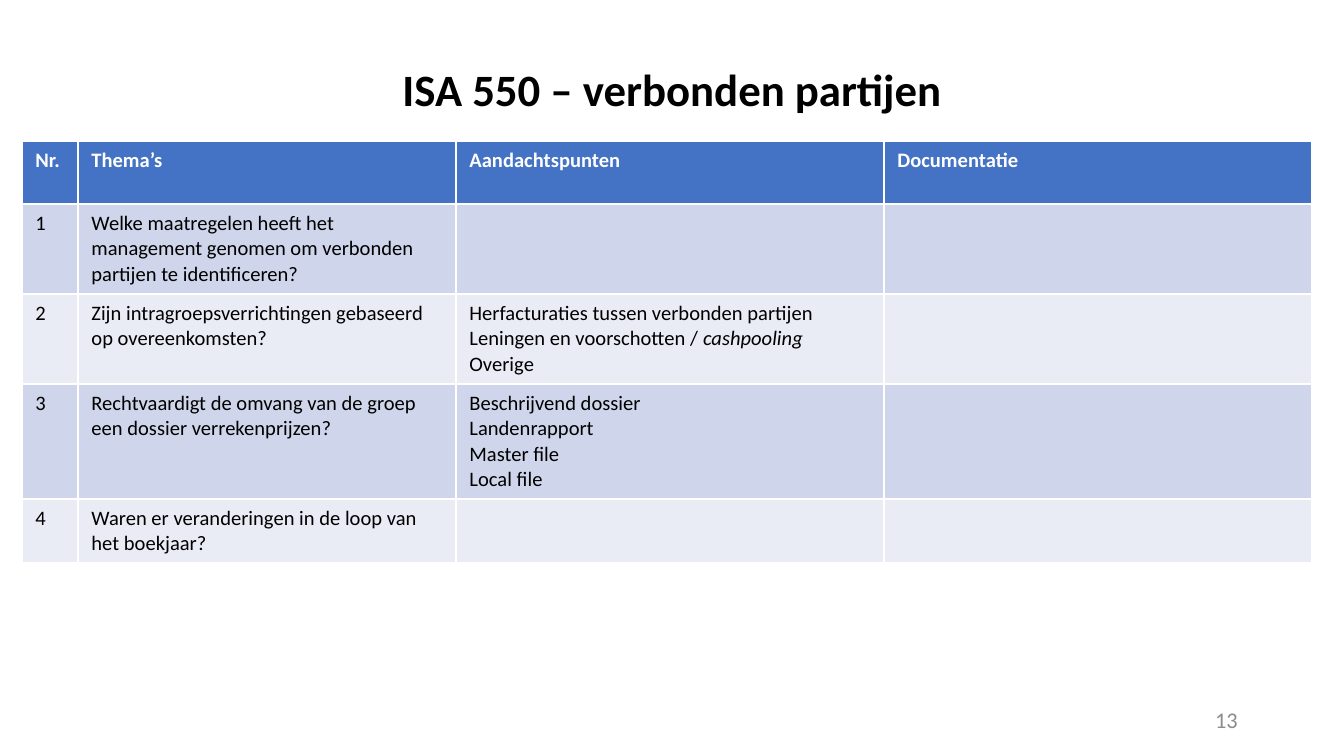
import pptx
import pptx.util
import pptx.dml.color
import pptx.enum.text

PX = 914400 / 134.4
BLACK = pptx.dml.color.RGBColor(0x00, 0x00, 0x00)
WHITE = pptx.dml.color.RGBColor(0xFF, 0xFF, 0xFF)
GREY = pptx.dml.color.RGBColor(0x8C, 0x8C, 0x8C)
BLUE = pptx.dml.color.RGBColor(0x44, 0x72, 0xC4)
BAND_DARK = pptx.dml.color.RGBColor(0xCF, 0xD5, 0xEA)
BAND_LIGHT = pptx.dml.color.RGBColor(0xE9, 0xEB, 0xF5)

COLUMNS = [56, 378, 428, 428]
ROWS = [
    (63, ["Nr.", "Thema’s", "Aandachtspunten", "Documentatie"]),
    (90, ["1", "Welke maatregelen heeft het management genomen om verbonden partijen te identificeren?", "", ""]),
    (90, ["2", "Zijn intragroepsverrichtingen gebaseerd op overeenkomsten?",
          "Herfacturaties tussen verbonden partijen\nLeningen en voorschotten / cashpooling\nOverige", ""]),
    (115, ["3", "Rechtvaardigt de omvang van de groep een dossier verrekenprijzen?",
           "Beschrijvend dossier\nLandenrapport\nMaster file\nLocal file", ""]),
    (63, ["4", "Waren er veranderingen in de loop van het boekjaar?", "", ""]),
]
ITALIC = "cashpooling"


def px(n):
    return pptx.util.Emu(round(n * PX))


def style(p, size, color, bold=False):
    p.font.name = "Calibri"
    p.font.size = pptx.util.Pt(size)
    p.font.color.rgb = color
    p.font.bold = bold


prs = pptx.Presentation()
prs.slide_width = px(1344)
prs.slide_height = px(756)
s = prs.slides.add_slide(prs.slide_layouts[5])

title = s.shapes.title
title.left, title.top, title.width, title.height = px(93), px(19), px(1158), px(146)
tf = title.text_frame
tf.text = "ISA 550 – verbonden partijen"
tf.vertical_anchor = pptx.enum.text.MSO_ANCHOR.MIDDLE
p = tf.paragraphs[0]
p.alignment = pptx.enum.text.PP_ALIGN.CENTER
p.line_spacing = 0.9
style(p, 24, BLACK, True)

height = sum(h for h, texts in ROWS)
table = s.shapes.add_table(len(ROWS), len(COLUMNS), px(22), px(141), px(sum(COLUMNS)), px(height)).table
for column, width in zip(table.columns, COLUMNS):
    column.width = px(width)
for i, (h, texts) in enumerate(ROWS):
    table.rows[i].height = px(h)
    header = i == 0
    band = BAND_DARK if i % 2 else BAND_LIGHT
    for j, text in enumerate(texts):
        cell = table.cell(i, j)
        cell.fill.solid()
        cell.fill.fore_color.rgb = BLUE if header else band
        tf = cell.text_frame
        for k, line in enumerate(text.split("\n")):
            p = tf.add_paragraph() if k else tf.paragraphs[0]
            style(p, 11, WHITE if header else BLACK, header)
            before, italic, after = line.partition(ITALIC)
            if before:
                p.add_run().text = before
            if italic:
                r = p.add_run()
                r.text = italic
                r.font.italic = True

sp = s.shapes.add_textbox(px(949), px(700), px(302), px(40))
tf = sp.text_frame
tf.word_wrap = True
tf.vertical_anchor = pptx.enum.text.MSO_ANCHOR.MIDDLE
tf.text = "13"
p = tf.paragraphs[0]
p.alignment = pptx.enum.text.PP_ALIGN.RIGHT
style(p, 12, GREY)

prs.save("out.pptx")
